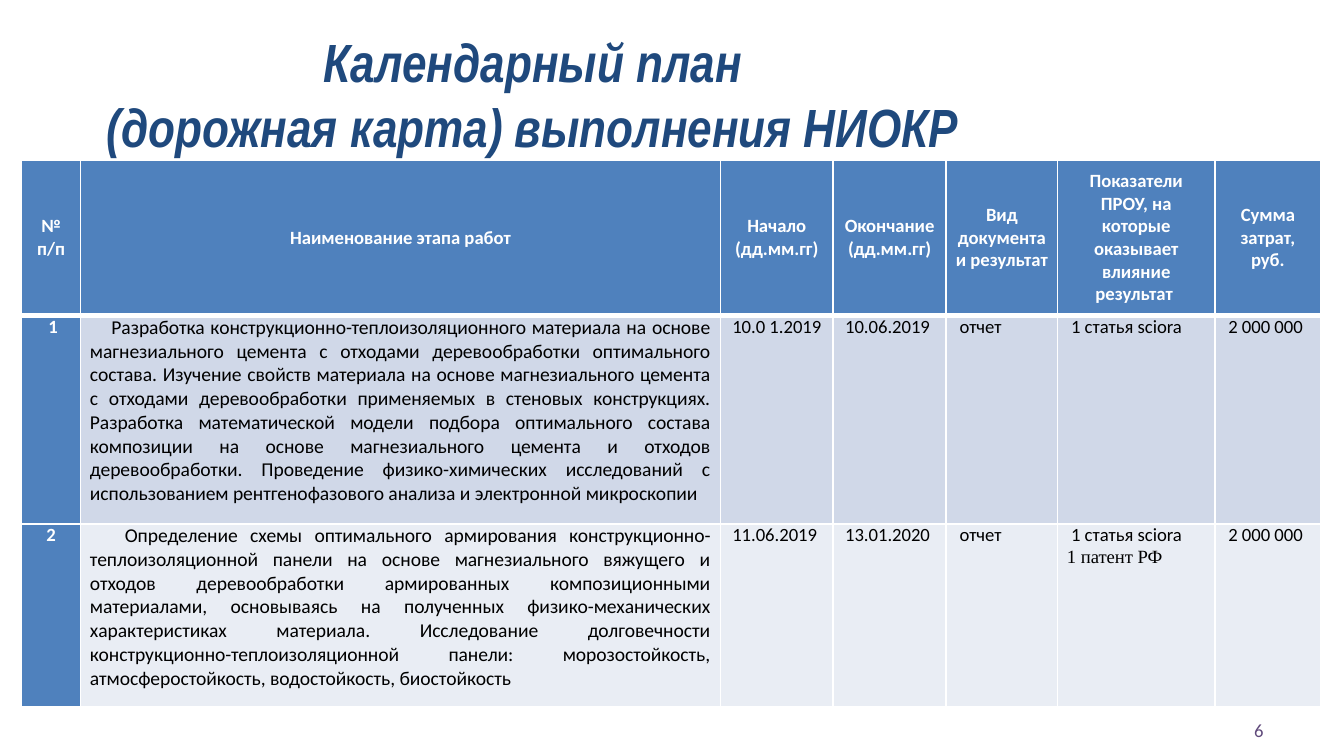
from lxml.etree import SubElement
from pptx import Presentation
from pptx.dml.color import RGBColor
from pptx.enum.text import MSO_ANCHOR, PP_ALIGN
from pptx.oxml.ns import qn
from pptx.util import Inches, Pt

WHITE, BLUE, BLACK = "FFFFFF", "4F81BD", "000000"
CENTER, LEFT, JUSTIFY = PP_ALIGN.CENTER, PP_ALIGN.LEFT, PP_ALIGN.JUSTIFY


def write(frame, text, size=10, font="Calibri", color=BLACK, bold=False,
          italic=False, align=LEFT, anchor=MSO_ANCHOR.TOP, indent=0, last_font=None):
    """Fill a frame: a new line starts a paragraph, a vertical tab breaks a line."""
    frame.word_wrap = True
    frame.vertical_anchor = anchor
    lines = text.split("\n")
    for number, line in enumerate(lines):
        para = frame.add_paragraph() if number else frame.paragraphs[0]
        para.alignment = align
        if indent:
            para._p.get_or_add_pPr().set("indent", str(Inches(indent)))
        for part_number, part in enumerate(line.split("\v")):
            if part_number:
                para.add_line_break()
            span = para.add_run()
            span.text = part
            span.font.size = Pt(size)
            span.font.name = last_font if last_font and number == len(lines) - 1 else font
            span.font.bold = bold
            span.font.italic = italic
            span.font.color.rgb = RGBColor.from_string(color)


def set_borders(cell, bottom=1, top=1):
    """Draw white cell borders, placed ahead of the cell fill."""
    properties = cell._tc.get_or_add_tcPr()
    for position, (side, width) in enumerate(
            [("lnL", 1), ("lnR", 1), ("lnT", top), ("lnB", bottom)]):
        line = SubElement(properties, qn(f"a:{side}"), w=str(Pt(width)))
        SubElement(SubElement(line, qn("a:solidFill")), qn("a:srgbClr"), val=WHITE)
        properties.insert(position, line)


# Widescreen page, 16 to 9
deck = Presentation()
deck.slide_width = Inches(10)
deck.slide_height = Inches(10 * 9 / 16)
page = deck.slides.add_slide(deck.slide_layouts[6])

# Page number
box = page.shapes.add_textbox(Inches(7.17), Inches(5.28), Inches(2.33), Inches(0.3))
write(box.text_frame, "6", color="604A7B", align=PP_ALIGN.RIGHT, anchor=MSO_ANCHOR.MIDDLE)

# Title
box = page.shapes.add_textbox(Inches(-0.27), Inches(0.47), Inches(8.56), Inches(0.45))
write(box.text_frame, "Календарный план \v(дорожная карта) выполнения НИОКР ", size=28.8,
      font="Arial Narrow", color="1F497D", bold=True, italic=True, align=CENTER,
      anchor=MSO_ANCHOR.MIDDLE)

# Schedule contents
headings = [
    "№ п/п", "Наименование этапа работ", "Начало\n(дд.мм.гг)", "Окончание\n(дд.мм.гг)",
    "Вид документа и результат", "Показатели ПРОУ, на которые оказывает влияние результат ",
    "Сумма затрат, руб.",
]
stages = [
    [" 1",
     "Разработка конструкционно-теплоизоляционного материала на основе магнезиального "
     "цемента с отходами деревообработки оптимального состава. Изучение свойств материала "
     "на основе магнезиального цемента с отходами деревообработки применяемых в стеновых "
     "конструкциях. Разработка математической модели подбора оптимального состава "
     "композиции на основе магнезиального цемента и отходов деревообработки. Проведение "
     "физико-химических исследований с использованием рентгенофазового анализа и "
     "электронной микроскопии ",
     "10.0 1.2019", "10.06.2019 ", " отчет", " 1 статья sciora", " 2 000 000"],
    ["2",
     "Определение схемы оптимального армирования конструкционно-теплоизоляционной панели "
     "на основе магнезиального вяжущего и отходов деревообработки армированных "
     "композиционными материалами, основываясь на полученных физико-механических "
     "характеристиках материала. Исследование долговечности "
     "конструкционно-теплоизоляционной панели: морозостойкость, атмосферостойкость, "
     "водостойкость, биостойкость",
     "11.06.2019 ", "13.01.2020 ", " отчет", " 1 статья sciora\n1 патент РФ", " 2 000 000"],
]
column_widths = [0.44, 4.76, 0.84, 0.84, 0.83, 1.17, 0.79]
row_heights = [1.16, 1.55, 1.36]
row_fills = [BLUE, "D0D8E8", "E9EDF4"]
name_indents = [0, 0.16, 0.26]
column_aligns = [CENTER, JUSTIFY, CENTER, CENTER, LEFT, LEFT, LEFT]

# Schedule table
table = page.shapes.add_table(
    len(row_heights), len(column_widths), Inches(0.16), Inches(1.19),
    Inches(sum(column_widths)), Inches(sum(row_heights))).table
for column, width in zip(table.columns, column_widths):
    column.width = Inches(width)
for row, height in zip(table.rows, row_heights):
    row.height = Inches(height)

for r, texts in enumerate([headings] + stages):
    for c, text in enumerate(texts):
        cell = table.cell(r, c)
        cell.margin_left = cell.margin_right = Inches(0.07)
        cell.margin_top = cell.margin_bottom = 0
        is_head, is_number, is_name = r == 0, c == 0, r > 0 and c == 1
        cell.fill.solid()
        cell.fill.fore_color.rgb = RGBColor.from_string(BLUE if is_number else row_fills[r])
        set_borders(cell, bottom=3 if is_head else 1, top=3 if r == 1 else 1)
        write(cell.text_frame, text,
              size=10.5 if is_name else 10,
              color=WHITE if is_head or is_number else BLACK,
              bold=is_head or is_number,
              align=CENTER if is_head else column_aligns[c],
              indent=name_indents[r] if is_name else 0,
              last_font="Times New Roman" if "патент" in text else None)
        cell.vertical_anchor = MSO_ANCHOR.MIDDLE if is_head else MSO_ANCHOR.TOP

deck.save("out.pptx")
